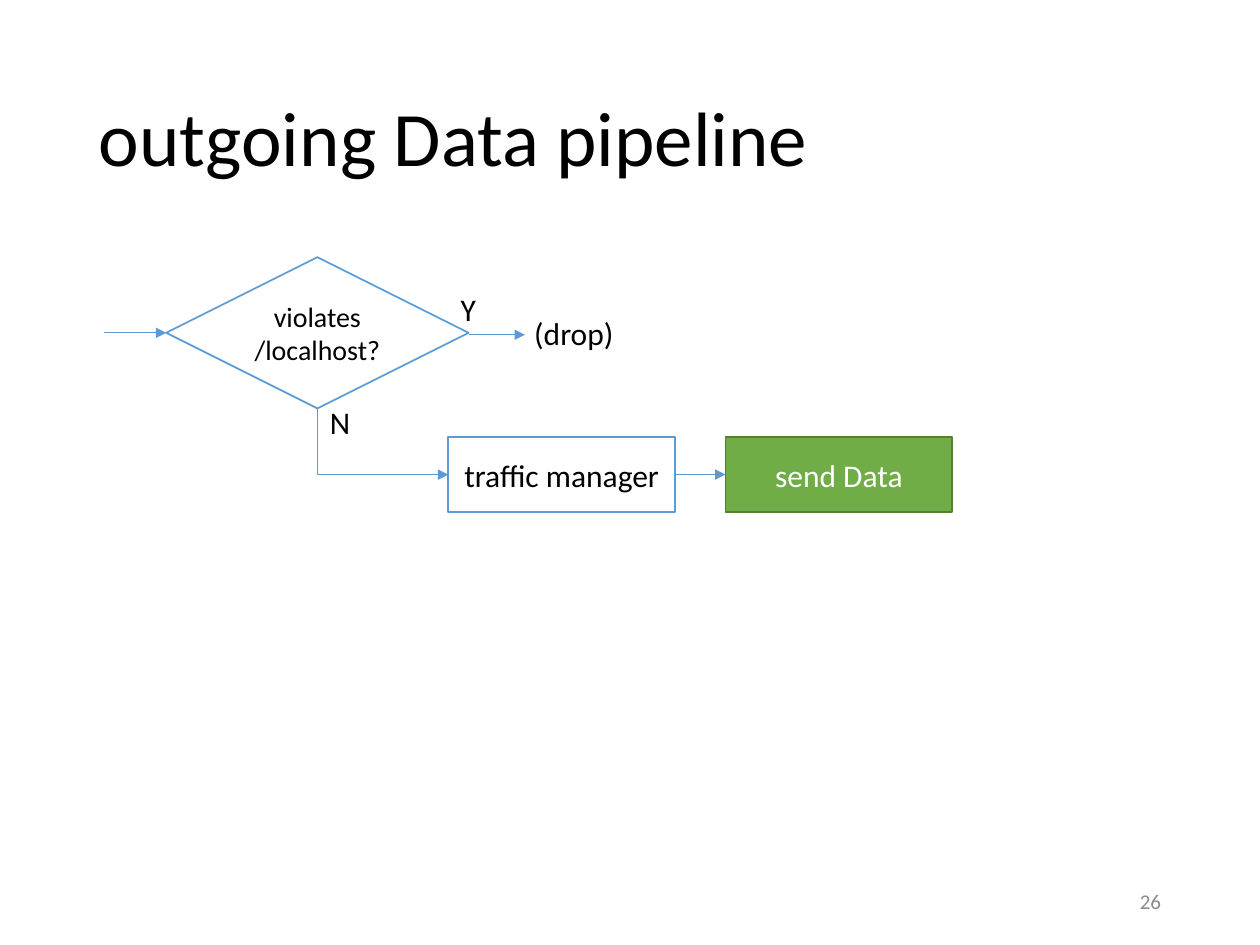
from lxml import etree
from pptx import Presentation
from pptx.dml.color import RGBColor
from pptx.enum.shapes import MSO_CONNECTOR, MSO_SHAPE
from pptx.enum.text import MSO_ANCHOR, PP_ALIGN
from pptx.oxml.ns import qn
from pptx.util import Pt

BLACK = RGBColor(0x00, 0x00, 0x00)
WHITE = RGBColor(0xFF, 0xFF, 0xFF)
GRAY = RGBColor(0x8C, 0x8C, 0x8C)
BLUE = RGBColor(0x5B, 0x9B, 0xD5)
GREEN = RGBColor(0x70, 0xAD, 0x47)
MOSS = RGBColor(0x53, 0x80, 0x35)

RECT = MSO_SHAPE.RECTANGLE
CHOICE = MSO_SHAPE.FLOWCHART_DECISION
LINE = MSO_CONNECTOR.STRAIGHT
ELBOW = MSO_CONNECTOR.ELBOW
TOP, MIDDLE = MSO_ANCHOR.TOP, MSO_ANCHOR.MIDDLE
LEFT, CENTER, RIGHT = PP_ALIGN.LEFT, PP_ALIGN.CENTER, PP_ALIGN.RIGHT
SOUTH, WEST, EAST = 2, 1, 3


class Chart:
    face = "Calibri"
    edge = 1
    wire = 0.5

    def __init__(self, slide):
        self.slide = slide

    def label(self, shape, text, size, color, align, anchor, wrap=True):
        frame = shape.text_frame
        frame.word_wrap = wrap
        frame.vertical_anchor = anchor
        para = frame.paragraphs[0]
        para.text = text
        para.alignment = align
        para.font.name = self.face
        para.font.size = Pt(size)
        para.font.color.rgb = color
        return para

    def text(self, box, text, size=18, color=BLACK, align=LEFT, anchor=TOP, wrap=False):
        shape = self.slide.shapes.add_textbox(*map(Pt, box))
        return self.label(shape, text, size, color, align, anchor, wrap)

    def node(self, kind, box, text, size=18, fill=WHITE, line=BLUE, color=BLACK):
        shape = self.slide.shapes.add_shape(kind, *map(Pt, box))
        shape.shadow.inherit = False
        shape.fill.solid()
        shape.fill.fore_color.rgb = fill
        shape.line.color.rgb = line
        shape.line.width = Pt(self.edge)
        self.label(shape, text, size, color, CENTER, MIDDLE)
        return shape

    def arrow(self, start, end, kind=LINE):
        link = self.slide.shapes.add_connector(kind, *map(Pt, start + end))
        link.line.color.rgb = BLUE
        link.line.width = Pt(self.wire)
        props = link._element.spPr
        etree.SubElement(props.find(qn("a:ln")), qn("a:tailEnd"), type="triangle")
        etree.SubElement(props, qn("a:effectLst"))
        return link

    def bend(self, start, end, first, last):
        link = self.arrow(start, end, ELBOW)
        link.begin_connect(first, SOUTH)
        link.end_connect(last, WEST)
        wide, high = end[0] - start[0], end[1] - start[1]
        link.left = Pt(start[0] + (wide - high) / 2)
        link.top = Pt(start[1] + (high - wide) / 2)
        link.width, link.height = Pt(high), Pt(wide)
        props = link._element.spPr
        props.find(qn("a:prstGeom")).set("prst", "bentConnector2")
        frame = props.find(qn("a:xfrm"))
        frame.set("rot", "16200000")
        frame.set("flipH", "1")


def main():
    deck = Presentation()
    deck.slide_width, deck.slide_height = Pt(720), Pt(540)
    chart = Chart(deck.slides.add_slide(deck.slide_layouts[6]))

    title = chart.text((49.5, 28.8, 621, 104.4), "outgoing Data pipeline", 44,
                       anchor=MIDDLE, wrap=True)
    title.line_spacing = 0.9
    chart.text((508.5, 500.5, 162, 28.8), "26", 12, GRAY, RIGHT, MIDDLE, True)

    left, top, wide, high = 256.2, 249.6, 129.6, 43.2
    mid, gap = top + high / 2, 28.8
    step = left + wide + gap
    manage = chart.node(RECT, (left, top, wide, high), "traffic manager")
    send = chart.node(RECT, (step, top, wide, high), "send Data",
                      fill=GREEN, line=MOSS, color=WHITE)
    check = chart.node(CHOICE, (95, 147, 172.8, 86.4), "violates /localhost?", 16)

    link = chart.arrow((left + wide, mid), (step, mid))
    link.begin_connect(manage, EAST)
    link.end_connect(send, WEST)
    chart.arrow((59.5, 190.2), (95, 190.2)).end_connect(check, WEST)
    chart.arrow((267.8, 191.3), (300, 191.3))
    chart.bend((181.4, 233.4), (left, mid), check, manage)

    chart.text((256.2, 162.2, 23, 29), "Y")
    chart.text((298.2, 176, 60.5, 29), "(drop)")
    chart.text((181.4, 227, 26, 29), "N")
    deck.save("out.pptx")


if __name__ == "__main__":
    main()
